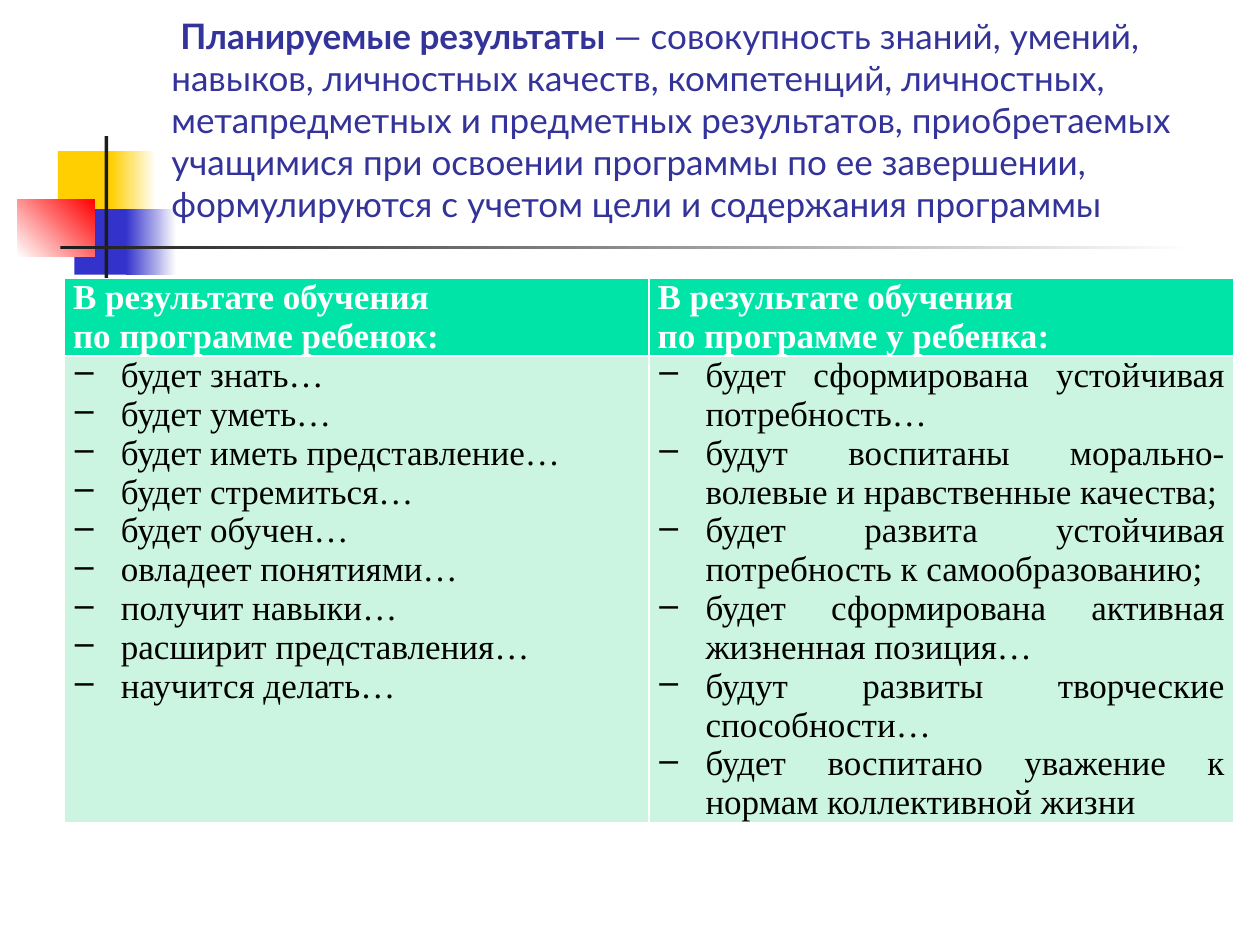
from lxml.etree import SubElement
from pptx import Presentation
from pptx.dml.color import RGBColor
from pptx.enum.shapes import MSO_SHAPE
from pptx.enum.text import MSO_ANCHOR, MSO_AUTO_SIZE, PP_ALIGN
from pptx.oxml import parse_xml
from pptx.oxml.ns import nsdecls, qn
from pptx.util import Inches, Pt

COLORS = {
    "title": "333399", "yellow": "FFCF01", "blue": "3333CC", "red": "FF0000",
    "dark": "1C1C1C", "white": "FFFFFF", "black": "000000",
    "header": "00E4A8", "body": "CCF5E1",
}

TITLE = [
    (" ", False),
    ("Планируемые результаты ", True),
    ("— совокупность знаний, умений, навыков, личностных качеств, компетенций, "
     "личностных, метапредметных и предметных результатов, приобретаемых учащимися "
     "при освоении программы по ее завершении, формулируются с учетом цели и "
     "содержания программы", False),
]

DECOR = [
    ((4.6, 12, 4.8, 5.2), ("yellow",), 0),
    ((8.8, 12, 3.6, 5.2), ("yellow", "white"), 0),
    ((5.9, 16.6, 4.6, 5.2), ("blue",), 0),
    ((10, 16.6, 4, 5.2), ("blue", "white"), 0),
    ((1.4, 15.8, 6.1, 4.6), ("white", "red"), 45),
    ((8.3, 10.8, 0.3, 11.5), ("dark",), 0),
    ((4.8, 19.5, 90, 0.3), ("dark", "white"), 0),
]

HEADERS = [
    ["В результате обучения", "по программе ребенок:"],
    ["В результате обучения", "по программе у ребенка:"],
]

RESULTS = [
    ["будет знать…", "будет уметь…", "будет иметь представление…",
     "будет стремиться…", "будет обучен…", "овладеет понятиями…",
     "получит навыки…", "расширит представления…", "научится делать…"],
    ["будет сформирована устойчивая потребность…",
     "будут воспитаны морально-волевые и нравственные качества;",
     "будет развита устойчивая потребность к самообразованию;",
     "будет сформирована активная жизненная позиция…",
     "будут развиты творческие способности…",
     "будет воспитано уважение к нормам коллективной жизни"],
]


class Deck:
    """Holds the style and the current slide, laid out on 100 columns by 75 rows."""

    size = Pt(20)
    title_font = "Lato"
    table_font = "Times New Roman"

    def __init__(self):
        self.prs = Presentation()
        self.prs.slide_width, self.prs.slide_height = Inches(10), Inches(7.5)
        self.s = self.prs.slides.add_slide(self.prs.slide_layouts[5])

    def grid(self, *cells):
        return [Inches(c / 10) for c in cells]

    def rgb(self, name):
        return RGBColor.from_string(COLORS[name])

    def style(self, r, font, color, bold):
        r.font.name, r.font.size, r.font.bold = font, self.size, bold
        r.font.color.rgb = self.rgb(color)

    def block(self, box, colors, angle):
        sp = self.s.shapes.add_shape(MSO_SHAPE.RECTANGLE, *self.grid(*box))
        sp.shadow.inherit = False
        sp.line.fill.background()
        if len(colors) == 1:
            sp.fill.solid()
            sp.fill.fore_color.rgb = self.rgb(colors[0])
            return
        sp.fill.gradient()
        sp.fill.gradient_angle = angle
        for stop, color in zip(sp.fill.gradient_stops, colors):
            stop.color.rgb = self.rgb(color)

    def title(self, box, runs):
        sp = self.s.shapes.title
        self.s.shapes._spTree.append(sp._element)
        sp.left, sp.top, sp.width, sp.height = self.grid(*box)
        tf = sp.text_frame
        tf.word_wrap, tf.auto_size = True, MSO_AUTO_SIZE.NONE
        tf.vertical_anchor = MSO_ANCHOR.BOTTOM
        p = tf.paragraphs[0]
        p.alignment = PP_ALIGN.LEFT
        for text, bold in runs:
            r = p.add_run()
            r.text = text
            self.style(r, self.title_font, "title", bold)

    def bullet(self, p):
        p.alignment = PP_ALIGN.JUSTIFY
        pPr = p._p.get_or_add_pPr()
        indent = Inches(0.38)
        pPr.set("marL", str(indent))
        pPr.set("indent", str(-indent))
        SubElement(pPr, qn("a:buChar")).set("char", "‒")

    def cell(self, cell, lines, fill, color, header):
        cell.margin_left = cell.margin_right = Inches(0.07)
        cell.margin_top = cell.margin_bottom = 0
        cell.fill.solid()
        cell.fill.fore_color.rgb = self.rgb(fill)
        for i, side in enumerate("LRTB"):
            cell._tc.get_or_add_tcPr().insert(i, parse_xml(
                f'<a:ln{side} {nsdecls("a")} w="{Pt(1)}"><a:solidFill>'
                f'<a:srgbClr val="{COLORS["white"]}"/></a:solidFill></a:ln{side}>'))
        cell.text_frame.text = "\n".join(lines)
        for p in cell.text_frame.paragraphs:
            self.style(p.runs[0], self.table_font, color, header)
            if not header:
                self.bullet(p)

    def table(self, box, heights, headers, bodies):
        table = self.s.shapes.add_table(2, len(headers), *self.grid(*box)).table
        for row, height in zip(table.rows, self.grid(*heights)):
            row.height = height
        for i, (head, body) in enumerate(zip(headers, bodies)):
            self.cell(table.cell(0, i), head, "header", "white", True)
            self.cell(table.cell(1, i), body, "body", "black", False)


def main():
    deck = Deck()
    for box, colors, angle in DECOR:
        deck.block(box, colors, angle)
    deck.title((12.6, 2.3, 85.2, 16), TITLE)
    deck.table((5.1, 22.1, 92.8, 43), (6.1, 36.9), HEADERS, RESULTS)
    deck.prs.save("out.pptx")


if __name__ == "__main__":
    main()
